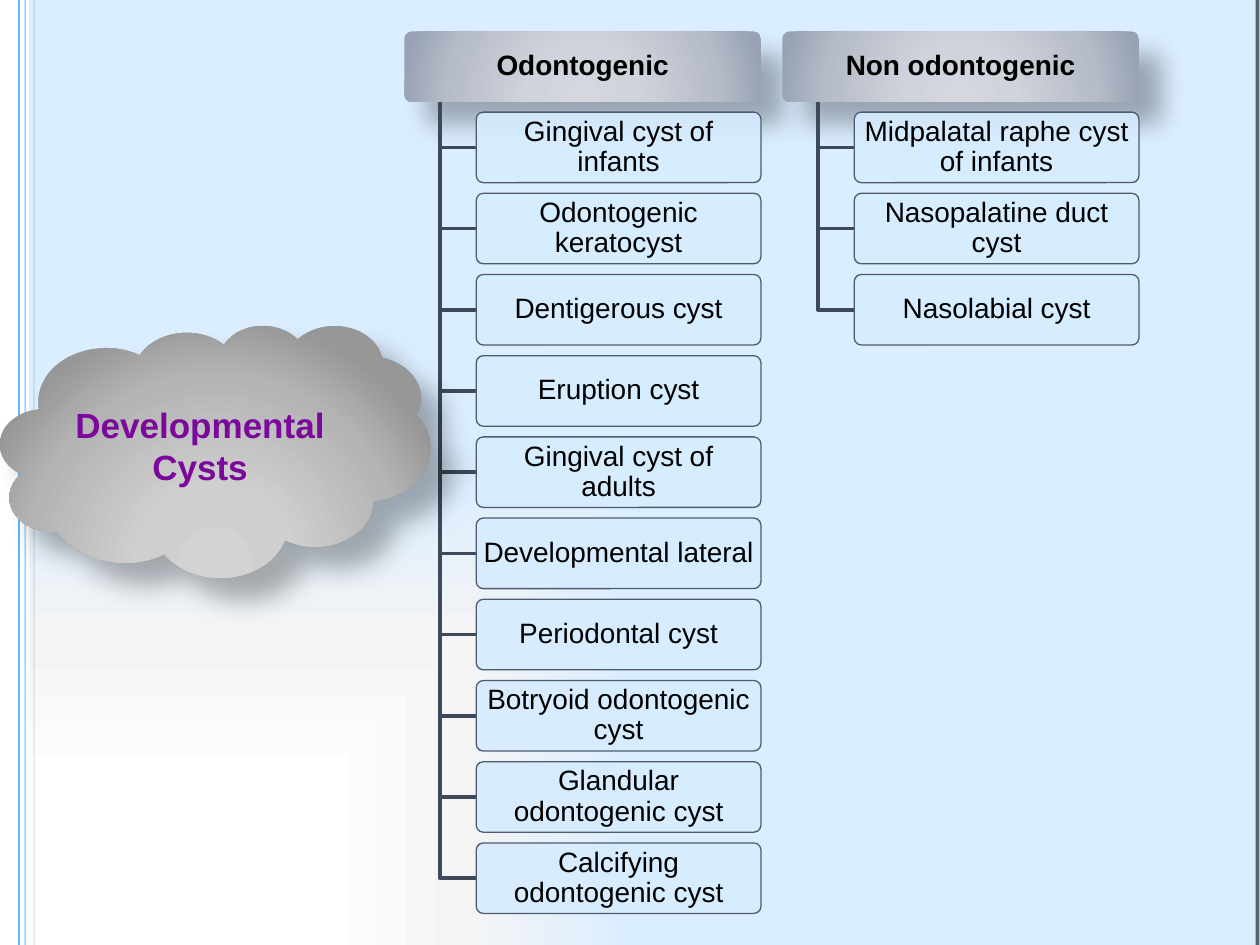
from lxml.etree import SubElement
from pptx import Presentation
from pptx.dml.color import RGBColor
from pptx.enum.shapes import MSO_CONNECTOR, MSO_SHAPE
from pptx.enum.text import MSO_ANCHOR, PP_ALIGN
from pptx.oxml import parse_xml
from pptx.oxml.ns import nsdecls, qn
from pptx.util import Inches, Pt

COLUMNS = [
    ("Odontogenic", [
        "Gingival cyst of infants", "Odontogenic keratocyst", "Dentigerous cyst",
        "Eruption cyst", "Gingival cyst of adults", "Developmental lateral",
        "Periodontal cyst", "Botryoid odontogenic cyst",
        "Glandular odontogenic cyst", "Calcifying odontogenic cyst",
    ]),
    ("Non odontogenic", [
        "Midpalatal raphe cyst of infants", "Nasopalatine duct cyst", "Nasolabial cyst",
    ]),
]
TOPIC = "Developmental Cysts"

BLACK = RGBColor(0x00, 0x00, 0x00)
WHITE = RGBColor(0xFF, 0xFF, 0xFF)
SKY = RGBColor(0x61, 0xB6, 0xFF)
PALE_BLUE = RGBColor(0xD6, 0xEC, 0xFF)
BRANCH = RGBColor(0x3E, 0x49, 0x59)
BOX_EDGE = RGBColor(0x4E, 0x5B, 0x6F)
PURPLE = RGBColor(0x7B, 0x08, 0x9A)

# Gradients: stops as (position, colour), shape of the path, focus (left, top, right, bottom)
BACKGROUND = ([(34, WHITE), (65, RGBColor(0xF4, 0xF4, 0xF4)),
               (100, RGBColor(0xDB, 0xEE, 0xFF))], "rect", (0, 100, 100, 0))
FOCUS = (50, 100, 50, 10)
STEEL = ([(0, RGBColor(0xD4, 0xD7, 0xDE)), (30, RGBColor(0xCF, 0xD3, 0xDB)),
          (75, RGBColor(0xB5, 0xBB, 0xC7)), (100, RGBColor(0x98, 0xA2, 0xB4))],
         "circle", FOCUS)
GREY = ([(0, RGBColor(0xD3, 0xD3, 0xD3)), (30, RGBColor(0xCF, 0xCF, 0xCF)),
         (75, RGBColor(0xB4, 0xB4, 0xB4)), (100, RGBColor(0x97, 0x97, 0x97))],
        "circle", FOCUS)

# Vertical rules: x, colour, width in points, opacity in percent
RULES = [(0.15, SKY, 1, 100), (0.2, SKY, 1, 59), (0.27, BLACK, 0.25, 59),
         (9.98, BLACK, 2.25, 59)]

SLIDE_WIDTH, SLIDE_HEIGHT = 10, 7.5
COLUMN_LEFT, COLUMN_STEP = 3.21, 3
HEADER_TOP, HEADER_WIDTH, BOX_HEIGHT = 0.25, 2.83, 0.56
HEADER_BOTTOM = HEADER_TOP + BOX_HEIGHT
STEM_INDENT, ITEM_INDENT = 0.28, 0.57
ITEM_WIDTH = HEADER_WIDTH - ITEM_INDENT
ITEM_TOP, ROW_STEP = 0.89, 5.8 / 9

HEADER_FONT = {"size": Pt(16), "name": "Arial", "bold": True}
ITEM_FONT = {"size": Pt(16), "name": "Arial", "bold": False}
TOPIC_FONT = {"size": Pt(20), "name": "Arial", "bold": True}


def set_gradient(fill, properties, gradient):
    """Replace the solid fill inside the properties element by a path gradient."""
    stops, path_kind, focus = gradient
    fill.solid()
    stop_xml = "".join(f'<a:gs pos="{position * 1000}"><a:srgbClr val="{color}"/></a:gs>'
                       for position, color in stops)
    sides = " ".join(f'{side}="{value * 1000}"' for side, value in zip("ltrb", focus))
    element = parse_xml(
        f'<a:gradFill {nsdecls("a")} rotWithShape="1"><a:gsLst>{stop_xml}</a:gsLst>'
        f'<a:path path="{path_kind}"><a:fillToRect {sides}/></a:path></a:gradFill>')
    solid = properties.find(qn("a:solidFill"))
    properties.replace(solid, element)


def set_opacity(solid_parent, percent):
    color = solid_parent.find(qn("a:solidFill"))[0]
    SubElement(color, qn("a:alpha")).set("val", str(percent * 1000))


def add_shadow(shape):
    effects = shape._element.spPr.find(qn("a:effectLst"))
    effects.append(parse_xml(
        f'<a:outerShdw {nsdecls("a")} blurRad="{Pt(15)}" dist="{Pt(18)}" dir="2700000" '
        'algn="tl" rotWithShape="0"><a:srgbClr val="000000"><a:alpha val="30000"/>'
        '</a:srgbClr></a:outerShdw>'))


def add_plain_shape(slide, kind, left, top, width, height):
    shape = slide.shapes.add_shape(kind, Inches(left), Inches(top),
                                   Inches(width), Inches(height))
    shape.shadow.inherit = False
    shape.line.fill.background()
    return shape


def set_text(shape, text, font_format, color, line_spacing=None, inset=None):
    frame = shape.text_frame
    frame.word_wrap = True
    frame.vertical_anchor = MSO_ANCHOR.MIDDLE
    if inset is not None:
        for side in ("left", "top", "right", "bottom"):
            setattr(frame, f"margin_{side}", Inches(inset))
    paragraph = frame.paragraphs[0]
    paragraph.text = text
    paragraph.alignment = PP_ALIGN.CENTER
    paragraph.line_spacing = line_spacing
    for name, value in font_format.items():
        setattr(paragraph.font, name, value)
    paragraph.font.color.rgb = color


def add_rounded_box(slide, left, top, width, text, font_format):
    box = add_plain_shape(slide, MSO_SHAPE.ROUNDED_RECTANGLE, left, top, width, BOX_HEIGHT)
    box.adjustments[0] = 0.1
    set_text(box, text, font_format, BLACK, line_spacing=0.9, inset=0.04)
    return box


def add_branch(slide, stem_x, item_x, item_y):
    """Draw the elbow from the header's bottom edge to the middle of an item's left side."""
    builder = slide.shapes.build_freeform(Inches(stem_x), Inches(HEADER_BOTTOM))
    builder.add_line_segments([(Inches(stem_x), Inches(item_y)),
                               (Inches(item_x), Inches(item_y))], close=False)
    branch = builder.convert_to_shape()
    branch.shadow.inherit = False
    branch.fill.background()
    branch.line.color.rgb = BRANCH
    branch.line.width = Pt(2)


def add_column(slide, left, title, items):
    header = add_rounded_box(slide, left, HEADER_TOP, HEADER_WIDTH, title, HEADER_FONT)
    set_gradient(header.fill, header._element.spPr, STEEL)
    add_shadow(header)
    item_left = left + ITEM_INDENT
    for row, item in enumerate(items):
        top = ITEM_TOP + row * ROW_STEP
        add_branch(slide, left + STEM_INDENT, item_left, top + BOX_HEIGHT / 2)
        box = add_rounded_box(slide, item_left, top, ITEM_WIDTH, item, ITEM_FONT)
        box.fill.solid()
        box.fill.fore_color.rgb = PALE_BLUE
        set_opacity(box._element.spPr, 90)
        box.line.color.rgb = BOX_EDGE
        box.line.width = Pt(0.75)


def add_rule(slide, x, color, width, opacity):
    rule = slide.shapes.add_connector(MSO_CONNECTOR.STRAIGHT, Inches(x), 0,
                                      Inches(x), Inches(SLIDE_HEIGHT))
    rule.line.color.rgb = color
    rule.line.width = Pt(width)
    properties = rule._element.spPr
    if opacity < 100:
        set_opacity(properties.find(qn("a:ln")), opacity)
    SubElement(properties, qn("a:effectLst"))


def main():
    presentation = Presentation()
    presentation.slide_width = Inches(SLIDE_WIDTH)
    presentation.slide_height = Inches(SLIDE_HEIGHT)
    slide = presentation.slides.add_slide(presentation.slide_layouts[6])

    background_fill = slide.background.fill
    background_fill.solid()
    set_gradient(background_fill, slide._element.cSld.bg.bgPr, BACKGROUND)

    margin = add_plain_shape(slide, MSO_SHAPE.RECTANGLE, 0, 0, 0.23, SLIDE_HEIGHT)
    margin.fill.solid()
    margin.fill.fore_color.rgb = WHITE
    for rule in RULES:
        add_rule(slide, *rule)

    for index, (title, items) in enumerate(COLUMNS):
        add_column(slide, COLUMN_LEFT + index * COLUMN_STEP, title, items)

    cloud = add_plain_shape(slide, MSO_SHAPE.CLOUD, 0, 2.58, 3.42, 2)
    set_gradient(cloud.fill, cloud._element.spPr, GREY)
    add_shadow(cloud)
    set_text(cloud, TOPIC, TOPIC_FONT, PURPLE)

    presentation.save("out.pptx")


if __name__ == "__main__":
    main()
